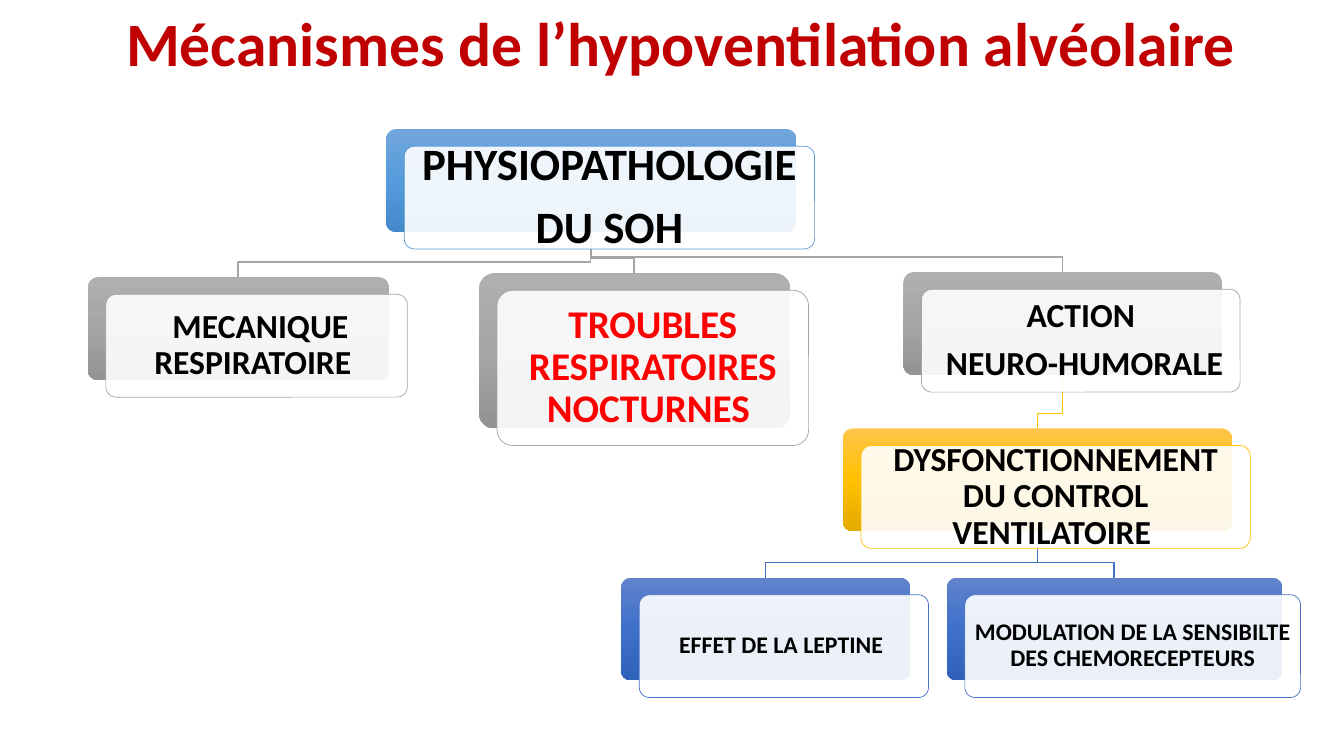
import collections
import copy

import lxml.etree
import pptx
import pptx.dml.color
import pptx.enum.shapes
import pptx.enum.text
import pptx.oxml.ns
import pptx.util

RGB = pptx.dml.color.RGBColor
SHAPE = pptx.enum.shapes.MSO_SHAPE
ALIGN = pptx.enum.text.PP_ALIGN
ANCHOR = pptx.enum.text.MSO_ANCHOR
qn = pptx.oxml.ns.qn

WHITE = RGB(0xFF, 0xFF, 0xFF)
BLACK = RGB(0x00, 0x00, 0x00)
RED = RGB(0xFF, 0x00, 0x00)
WINE = RGB(0xC0, 0x00, 0x00)

Tone = collections.namedtuple("Tone", "line stops")
SKY = Tone(RGB(0x5B, 0x9B, 0xD5),
           [RGB(0x71, 0xA6, 0xDB), RGB(0x55, 0x9B, 0xDB), RGB(0x44, 0x8A, 0xCA)])
GREY = Tone(RGB(0xA5, 0xA5, 0xA5),
            [RGB(0xAF, 0xAF, 0xAF), RGB(0xA5, 0xA5, 0xA5), RGB(0x93, 0x93, 0x93)])
GOLD = Tone(RGB(0xFF, 0xC0, 0x00),
            [RGB(0xFF, 0xC6, 0x4B), RGB(0xFF, 0xC0, 0x00), RGB(0xE3, 0xAB, 0x00)])
BLUE = Tone(RGB(0x44, 0x72, 0xC4),
            [RGB(0x61, 0x83, 0xCB), RGB(0x3E, 0x70, 0xCA), RGB(0x30, 0x62, 0xBB)])

Node = collections.namedtuple("Node", "x y w h tone size ink lines")
ROOT = Node(383, 128, 407, 102, SKY, 32, BLACK, ["PHYSIOPATHOLOGIE ", "DU SOH"])
CHEST = Node(87, 275, 299, 102, GREY, 24, BLACK, [" MECANIQUE RESPIRATOIRE "])
NIGHT = Node(475, 271, 309, 154, GREY, 28, RED, ["TROUBLES RESPIRATOIRES NOCTURNES "])
NERVE = Node(896, 270, 316, 102, GREY, 24, BLACK, ["ACTION", " NEURO-HUMORALE"])
DRIVE = Node(836, 425, 386, 102, GOLD, 24, BLACK,
             ["DYSFONCTIONNEMENT DU CONTROL VENTILATOIRE "])
LEPTIN = Node(616, 573, 287, 102, BLUE, 17, BLACK, ["EFFET DE LA LEPTINE "])
SENSE = Node(939, 573, 333, 102, BLUE, 17, BLACK,
             ["MODULATION DE LA SENSIBILTE DES CHEMORECEPTEURS"])

NODES = [ROOT, CHEST, NIGHT, NERVE, DRIVE, LEPTIN, SENSE]
LINKS = [(DRIVE, SENSE), (DRIVE, LEPTIN), (NERVE, DRIVE),
         (ROOT, NERVE), (ROOT, NIGHT), (ROOT, CHEST)]


class Chart:
    PX = 9144
    FONT = "Calibri"
    SHIFT = (18, 17)
    DROP = 15

    def __init__(self, slide):
        self.shapes = slide.shapes

    def px(self, *sides):
        return [pptx.util.Emu(side * self.PX) for side in sides]

    def label(self, par, text, size, ink):
        par.alignment = ALIGN.CENTER
        run = par.add_run()
        run.text = text
        run.font.name = self.FONT
        run.font.size = pptx.util.Pt(size)
        run.font.bold = True
        run.font.color.rgb = ink

    def title(self, x, y, w, h, text, size, ink):
        frame = self.shapes.add_textbox(*self.px(x, y, w, h)).text_frame
        frame.word_wrap = True
        self.label(frame.paragraphs[0], text, size, ink)

    def link(self, top, low):
        start = top.x + top.w // 2
        end = low.x + low.w // 2
        bend = low.y - self.DROP
        pen = self.shapes.build_freeform(start, top.y + top.h, scale=self.PX)
        pen.add_line_segments([(start, bend), (end, bend), (end, low.y)], close=False)
        wire = pen.convert_to_shape()
        wire.shadow.inherit = False
        wire.fill.background()
        wire.line.color.rgb = low.tone.line
        wire.line.width = pptx.util.Pt(1)

    def block(self, x, y, w, h):
        shape = self.shapes.add_shape(SHAPE.ROUNDED_RECTANGLE, *self.px(x, y, w, h))
        shape.adjustments[0] = 0.1
        shape.shadow.inherit = False
        return shape

    def shade(self, node):
        back = self.block(node.x, node.y, node.w, node.h)
        back.line.fill.background()
        back.fill.gradient()
        back.fill.gradient_angle = 270
        stops = back.element.spPr.find(".//" + qn("a:gsLst"))
        stops.insert(1, copy.deepcopy(stops[0]))
        for stop, place, tint in zip(back.fill.gradient_stops, (0, 0.5, 1), node.tone.stops):
            stop.position = place
            stop.color.rgb = tint

    def card(self, node):
        left, down = self.SHIFT
        front = self.block(node.x + left, node.y + down, node.w, node.h)
        front.fill.solid()
        front.fill.fore_color.rgb = WHITE
        tint = front.element.spPr.find(qn("a:solidFill"))[0]
        lxml.etree.SubElement(tint, qn("a:alpha")).set("val", "90000")
        front.line.color.rgb = node.tone.line
        front.line.width = pptx.util.Pt(0.5)
        frame = front.text_frame
        frame.word_wrap = True
        frame.vertical_anchor = ANCHOR.MIDDLE
        inset, = self.px(round(node.size / 2.4))
        frame.margin_left = frame.margin_right = inset
        frame.margin_top = frame.margin_bottom = inset
        for i, line in enumerate(node.lines):
            par = frame.add_paragraph() if i else frame.paragraphs[0]
            par.line_spacing = 0.9
            par.space_after = pptx.util.Pt(round(node.size * 0.35))
            self.label(par, line, node.size, node.ink)


def main():
    deck = pptx.Presentation()
    deck.slide_width = pptx.util.Inches(13.33)
    deck.slide_height = pptx.util.Inches(7.5)
    chart = Chart(deck.slides.add_slide(deck.slide_layouts[6]))
    chart.title(46, 0, 1260, 84, "Mécanismes de l’hypoventilation alvéolaire", 44, WINE)
    for top, low in LINKS:
        chart.link(top, low)
    for node in NODES:
        chart.shade(node)
        chart.card(node)
    deck.save("out.pptx")


if __name__ == "__main__":
    main()
